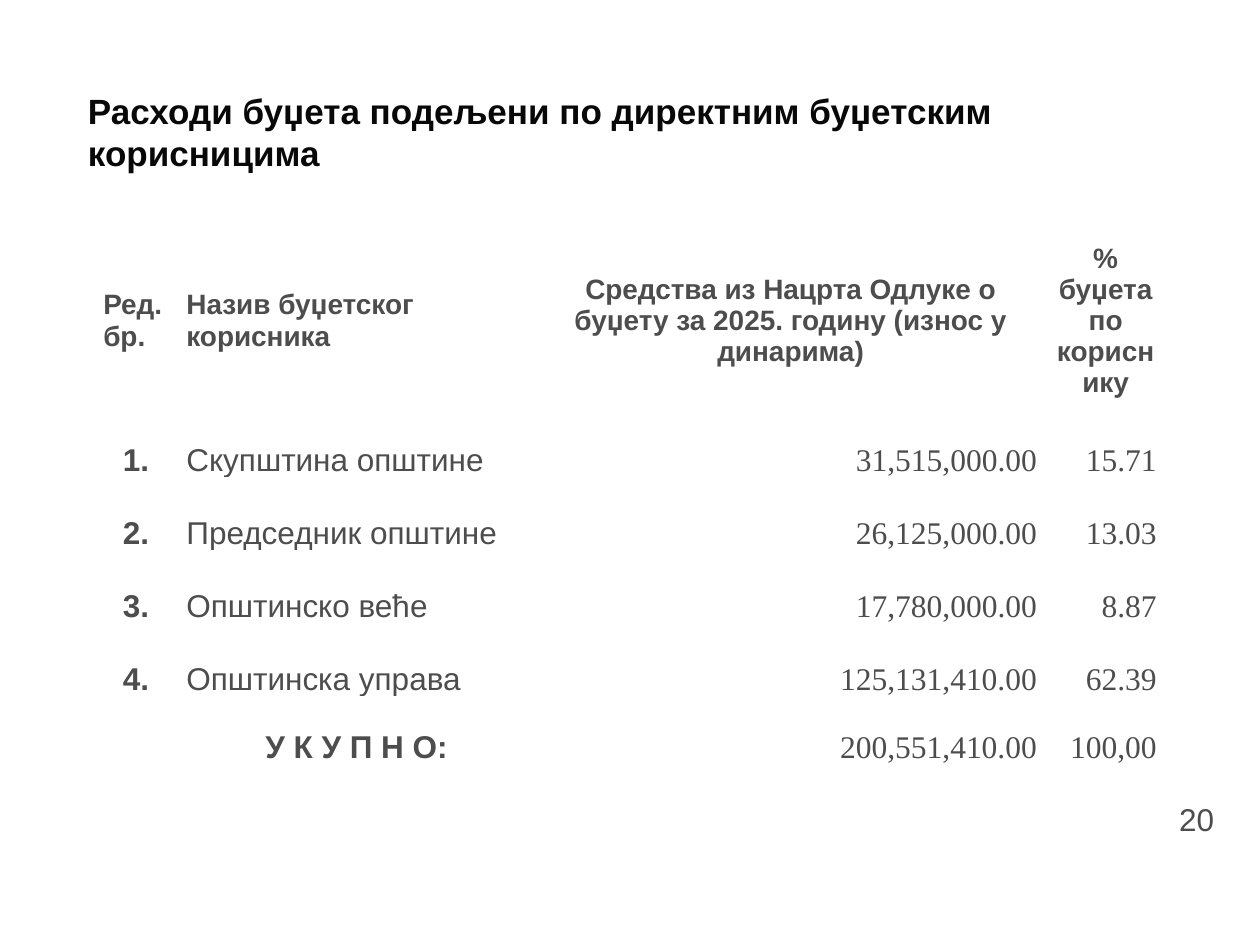
import pptx
import pptx.util
import pptx.dml.color
import pptx.enum.text
import pptx.oxml.ns
from lxml import etree

Inches, Pt = pptx.util.Inches, pptx.util.Pt
ANCHOR = pptx.enum.text.MSO_ANCHOR
ALIGN = pptx.enum.text.PP_ALIGN
WIDTH, HEIGHT = Inches(10), Inches(7.5)

COLORS = {"title": "080808", "text": "4D4D4D", "white": "FFFFFF"}
COLUMN_WIDTHS = [0.66, 2.84, 4.05, 0.95]
ROW_HEIGHTS = [1.25] + [0.58] * 4 + [0.54]
ROWS = [
    ["Ред. бр.", "Назив буџетског корисника",
     "Средства из Нацрта Одлуке о буџету за 2025. годину (износ у динарима)",
     "% буџета по кориснику"],
    ["1.", "Скупштина општине", "31,515,000.00", "15.71"],
    ["2.", "Председник општине", "26,125,000.00", "13.03"],
    ["3.", "Општинско веће", "17,780,000.00", "8.87"],
    ["4.", "Општинска управа", "125,131,410.00", "62.39"],
    ["", "У К У П Н О:", "200,551,410.00", "100,00"],
]


def rgb(name):
    return pptx.dml.color.RGBColor.from_string(COLORS[name])


def write(text_frame, text, size, color="text", bold=False, font="Arial", align=ALIGN.LEFT):
    text_frame.text = text
    paragraph = text_frame.paragraphs[0]
    paragraph.alignment = align
    for run in paragraph.runs:
        run.font.name = font
        run.font.size = Pt(size)
        run.font.bold = bold
        run.font.color.rgb = rgb(color)


def add_text(slide, text, left, top, width, height, size, anchor=ANCHOR.TOP, **style):
    """Place a text box by shares of the slide's size."""
    box = slide.shapes.add_textbox(int(WIDTH * left), int(HEIGHT * top),
                                   int(WIDTH * width), int(HEIGHT * height))
    box.text_frame.word_wrap = True
    box.text_frame.vertical_anchor = anchor
    write(box.text_frame, text, size, **style)


def set_borders(cell, bottom_width):
    properties = cell._tc.get_or_add_tcPr()
    for index, side in enumerate(["lnL", "lnR", "lnT", "lnB"]):
        width = bottom_width if side == "lnB" else 1
        line = etree.Element(pptx.oxml.ns.qn("a:" + side), w=str(Pt(width)))
        fill = etree.SubElement(line, pptx.oxml.ns.qn("a:solidFill"))
        etree.SubElement(fill, pptx.oxml.ns.qn("a:srgbClr"), val=COLORS["white"])
        properties.insert(index, line)


def cell_style(row, column):
    """Size, weight, font and alignment for a place in the table."""
    header, total = row == 0, row == len(ROWS) - 1
    if header:
        align = ALIGN.LEFT if column < 2 else ALIGN.CENTER
    elif column >= 2:
        align = ALIGN.RIGHT
    else:
        align = ALIGN.CENTER if column == 0 or total else ALIGN.LEFT
    return {
        "size": 16 if header else 18,
        "bold": header or column == 0 or (total and column == 1),
        "font": "Arial" if header or column < 2 else "Times New Roman",
        "align": align,
    }


def add_budget_table(slide):
    frame = slide.shapes.add_table(
        len(ROWS), len(COLUMN_WIDTHS), Inches(0.75), Inches(1.88),
        Inches(sum(COLUMN_WIDTHS)), Inches(sum(ROW_HEIGHTS)))
    table = frame.table
    table.first_row = table.horz_banding = False
    for column, width in zip(table.columns, COLUMN_WIDTHS):
        column.width = Inches(width)
    for row, height in zip(table.rows, ROW_HEIGHTS):
        row.height = Inches(height)
    for row_index, texts in enumerate(ROWS):
        for column_index, text in enumerate(texts):
            cell = table.cell(row_index, column_index)
            cell.margin_left = cell.margin_right = Inches(0.07)
            cell.margin_top = cell.margin_bottom = 0
            cell.vertical_anchor = ANCHOR.BOTTOM if row_index else ANCHOR.MIDDLE
            # Odd rows carry the white band
            if row_index % 2:
                cell.fill.solid()
                cell.fill.fore_color.rgb = rgb("white")
            else:
                cell.fill.background()
            set_borders(cell, 1 if row_index else 2)
            write(cell.text_frame, text, **cell_style(row_index, column_index))


def main():
    presentation = pptx.Presentation()
    presentation.slide_width, presentation.slide_height = WIDTH, HEIGHT
    slide = presentation.slides.add_slide(presentation.slide_layouts[6])

    # Heading
    add_text(slide, "Расходи буџета подељени по директним буџетским корисницима",
             0.06, 0.056, 0.9, 0.167, 20, ANCHOR.MIDDLE, color="title", bold=True)
    # Budget by beneficiary
    add_budget_table(slide)
    # Page number
    add_text(slide, "20", 0.926, 0.84, 0.074, 0.073, 18)

    presentation.save("out.pptx")


if __name__ == "__main__":
    main()
